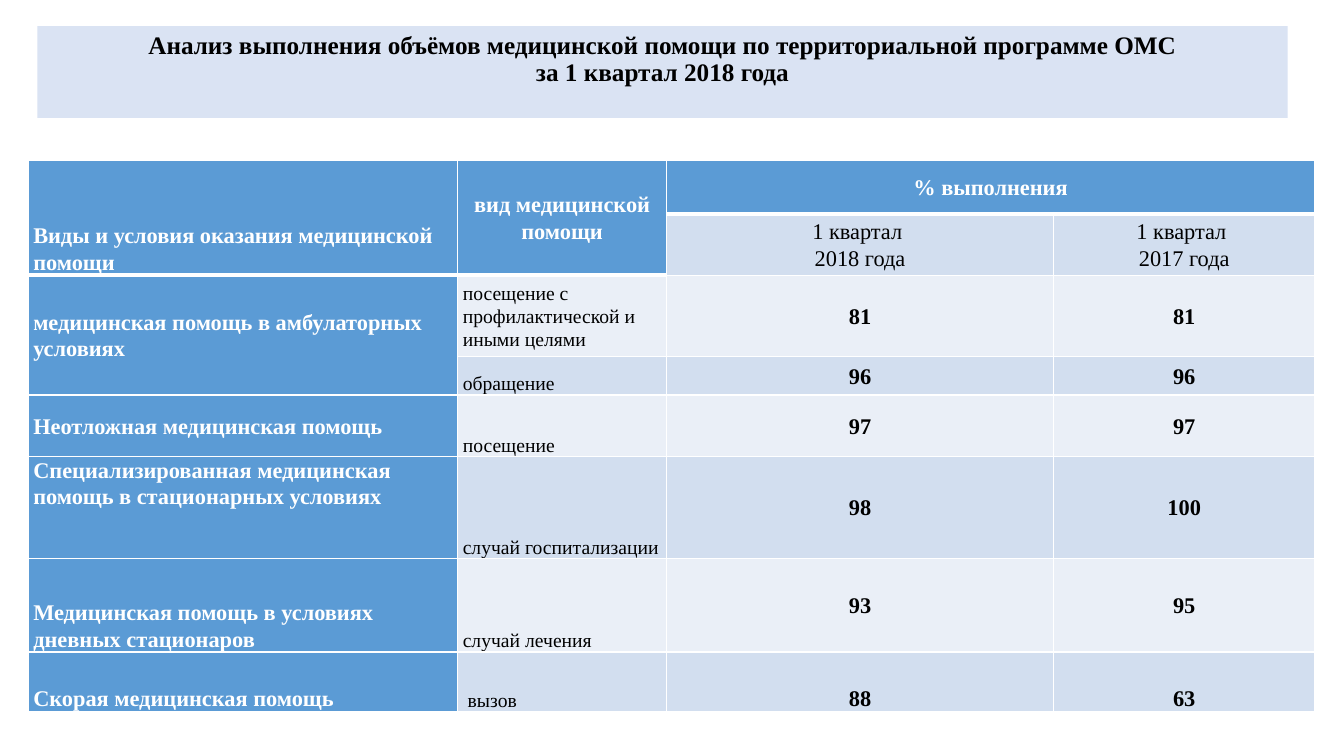
import dataclasses

import pptx
import pptx.dml.color
import pptx.enum.shapes
import pptx.enum.text
import pptx.oxml
import pptx.oxml.ns
import pptx.util

ALIGN = pptx.enum.text.PP_ALIGN
ANCHOR = pptx.enum.text.MSO_ANCHOR


@dataclasses.dataclass(frozen=True)
class Theme:
    font: str = "Times New Roman"
    title_fill: str = "DAE3F3"
    head_fill: str = "5B9BD5"
    dark_band: str = "D2DEEF"
    light_band: str = "EAEFF7"
    ink: str = "000000"
    paper: str = "FFFFFF"
    title_size: int = 18
    main_size: int = 16
    kind_size: int = 14
    title_spacing: float = 0.9
    cell_spacing: float = 1.07
    thin: int = 1
    thick: int = 3


class SlideBuilder:
    def __init__(self, deck, theme):
        self.deck = deck
        self.theme = theme
        self.page = deck.slides.add_slide(deck.slide_layouts[6])

    def across(self, percent):
        return round(self.deck.slide_width * percent / 100)

    def down(self, percent):
        return round(self.deck.slide_height * percent / 100)

    def paint(self, fill, color):
        fill.solid()
        fill.fore_color.rgb = pptx.dml.color.RGBColor.from_string(color)

    def set_text(self, frame, text, size, color, bold, align, spacing):
        frame.word_wrap = True
        frame.text = text
        for para in frame.paragraphs:
            para.alignment = align
            para.line_spacing = spacing
            for span in para.runs:
                span.font.name = self.theme.font
                span.font.size = pptx.util.Pt(size)
                span.font.bold = bold
                self.paint(span.font.fill, color)

    def title(self, left, top, width, height, text):
        box = self.page.shapes.add_shape(
            pptx.enum.shapes.MSO_SHAPE.RECTANGLE,
            self.across(left), self.down(top), self.across(width), self.down(height))
        box.shadow.inherit = False
        self.paint(box.fill, self.theme.title_fill)
        box.line.fill.background()
        frame = box.text_frame
        frame.vertical_anchor = ANCHOR.TOP
        frame.margin_top = pptx.util.Inches(0.06)
        self.set_text(frame, text, self.theme.title_size, self.theme.ink, True,
                      ALIGN.CENTER, self.theme.title_spacing)

    def table(self, left, top, widths, heights):
        frame = self.page.shapes.add_table(
            len(heights), len(widths), self.across(left), self.down(top),
            self.across(sum(widths)), self.down(sum(heights)))
        table = frame.table
        table.first_row = False
        table.horz_banding = False
        for column, width in zip(table.columns, widths):
            column.width = self.across(width)
        for row, height in zip(table.rows, heights):
            row.height = self.down(height)
        return table

    def cell(self, cell, fill, top_width, bottom_width):
        borders = {"lnL": self.theme.thin, "lnR": self.theme.thin,
                   "lnT": top_width, "lnB": bottom_width}
        properties = cell._tc.get_or_add_tcPr()
        for side, width in borders.items():
            properties.append(pptx.oxml.parse_xml(
                f'<a:{side} {pptx.oxml.ns.nsdecls("a")} w="{pptx.util.Pt(width)}">'
                f'<a:solidFill><a:srgbClr val="{self.theme.paper}"/></a:solidFill></a:{side}>'))
        self.paint(cell.fill, fill)
        cell.margin_left = cell.margin_right = pptx.util.Inches(0.05)
        cell.margin_top = cell.margin_bottom = 0

    def cell_text(self, cell, text, anchor, align, color, size, bold=True):
        cell.vertical_anchor = anchor
        self.set_text(cell.text_frame, text, size, color, bold, align, self.theme.cell_spacing)


COLUMN_WIDTHS = [31.96, 15.53, 28.81, 19.43]
ROW_HEIGHTS = [7.07, 8.13, 10.8, 5.07, 8.13, 13.47, 12.4, 7.87]
HEADERS = [
    ("Виды и условия оказания медицинской помощи", ANCHOR.BOTTOM, ALIGN.LEFT),
    ("вид медицинской помощи", ANCHOR.MIDDLE, ALIGN.CENTER),
    ("% выполнения", ANCHOR.MIDDLE, ALIGN.CENTER),
]
PERIODS = ["1 квартал \n2018 года", "1 квартал \n2017 года"]
CARE_ROWS = [
    ("медицинская помощь в амбулаторных условиях", ANCHOR.MIDDLE,
     "посещение с профилактической и иными целями", ANCHOR.MIDDLE, 81, 81, ANCHOR.MIDDLE),
    (None, ANCHOR.MIDDLE, "обращение", ANCHOR.BOTTOM, 96, 96, ANCHOR.MIDDLE),
    ("Неотложная медицинская помощь", ANCHOR.MIDDLE,
     "посещение", ANCHOR.BOTTOM, 97, 97, ANCHOR.MIDDLE),
    ("Специализированная медицинская помощь в стационарных условиях", ANCHOR.TOP,
     "случай госпитализации", ANCHOR.BOTTOM, 98, 100, ANCHOR.MIDDLE),
    ("Медицинская помощь в условиях дневных стационаров", ANCHOR.BOTTOM,
     "случай лечения", ANCHOR.BOTTOM, 93, 95, ANCHOR.MIDDLE),
    ("Скорая медицинская помощь", ANCHOR.BOTTOM,
     " вызов", ANCHOR.BOTTOM, 88, 63, ANCHOR.BOTTOM),
]


def fill_table(builder, table):
    theme = builder.theme
    for row in range(len(ROW_HEIGHTS)):
        band = theme.dark_band if row % 2 else theme.light_band
        for column in range(len(COLUMN_WIDTHS)):
            head_end = 1 if column < 2 else 0
            is_head = row <= head_end or column == 0
            builder.cell(table.cell(row, column), theme.head_fill if is_head else band,
                         theme.thick if row == head_end + 1 else theme.thin,
                         theme.thick if row <= head_end else theme.thin)

    for start, end in [((0, 0), (1, 0)), ((0, 1), (1, 1)), ((0, 2), (0, 3)), ((2, 0), (3, 0))]:
        table.cell(*start).merge(table.cell(*end))

    for column, (text, anchor, align) in enumerate(HEADERS):
        builder.cell_text(table.cell(0, column), text, anchor, align,
                          theme.paper, theme.main_size)
    for column, text in enumerate(PERIODS, 2):
        builder.cell_text(table.cell(1, column), text, ANCHOR.MIDDLE, ALIGN.CENTER,
                          theme.ink, theme.main_size, False)
    for row, (care, care_anchor, kind, kind_anchor, *values, value_anchor) in enumerate(CARE_ROWS, 2):
        if care:
            builder.cell_text(table.cell(row, 0), care, care_anchor, ALIGN.LEFT,
                              theme.paper, theme.main_size)
        builder.cell_text(table.cell(row, 1), kind, kind_anchor, ALIGN.LEFT,
                          theme.ink, theme.kind_size, False)
        for column, value in enumerate(values, 2):
            builder.cell_text(table.cell(row, column), str(value), value_anchor, ALIGN.CENTER,
                              theme.ink, theme.main_size)


def main():
    deck = pptx.Presentation()
    deck.slide_width = pptx.util.Inches(13.33)
    deck.slide_height = pptx.util.Inches(7.5)
    builder = SlideBuilder(deck, Theme())
    builder.title(2.78, 3.47, 93.02, 12.13,
                  "Анализ выполнения объёмов медицинской помощи по территориальной программе ОМС\v"
                  "за 1 квартал 2018 года")
    fill_table(builder, builder.table(2.1, 21.2, COLUMN_WIDTHS, ROW_HEIGHTS))
    deck.save("out.pptx")


if __name__ == "__main__":
    main()
